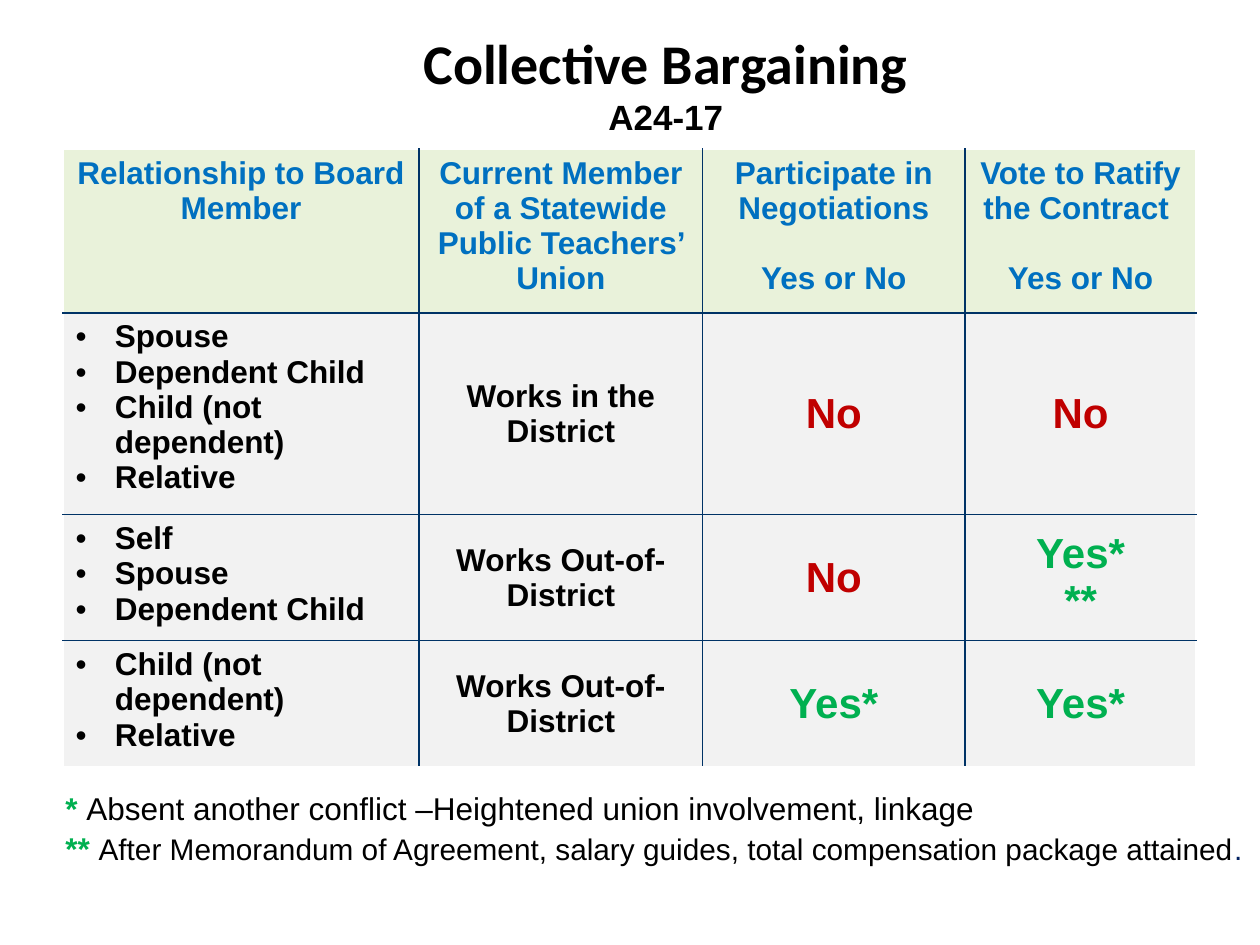
import pptx
import pptx.dml.color
import pptx.enum.text
import pptx.oxml
import pptx.oxml.ns
import pptx.util
from dataclasses import dataclass

Pt = pptx.util.Pt
ALIGN = pptx.enum.text.PP_ALIGN
ANCHOR = pptx.enum.text.MSO_ANCHOR


@dataclass(frozen=True)
class Theme:
    body_font: str = "Arial"
    title_font: str = "Calibri"
    ink: str = "000000"
    heading: str = "0070C0"
    no: str = "C00000"
    yes: str = "00B050"
    stop: str = "002060"
    rule: str = "003366"
    edge: str = "FFFFFF"
    header_fill: str = "E9F2DA"
    body_fill: str = "F2F2F2"
    title_size: int = 32
    subtitle_size: int = 20
    text_size: int = 18
    note_size: int = 17
    answer_size: int = 24
    bullet_indent: float = 22.5
    header_gap: float = 20


T = Theme()

HEADERS = [
    ["Relationship to Board Member"],
    ["Current Member of a Statewide", "Public Teachers’ Union"],
    ["Participate in Negotiations", "Yes or No"],
    ["Vote to Ratify the Contract ", "Yes or No"],
]
ROWS = [
    (["Spouse", "Dependent Child", "Child (not dependent)", "Relative"],
     ["Works in the District"], ["No"], ["No"]),
    (["Self", "Spouse", "Dependent Child"],
     ["Works Out-of-District"], ["No"], ["Yes*", "**"]),
    (["Child (not dependent)", "Relative"],
     ["Works Out-of-District"], ["Yes*"], ["Yes*"]),
]
COL_WIDTHS = [203.5, 162, 150, 132]
ROW_HEIGHTS = [93.6, 108, 72, 67.5]


def add_run(p, text, color=T.ink, size=T.text_size, bold=True, name=T.body_font):
    r = p.add_run()
    r.text = text
    for key, value in {"name": name, "size": Pt(size), "bold": bold}.items():
        setattr(r.font, key, value)
    r.font.color.rgb = pptx.dml.color.RGBColor.from_string(color)


def add_bullet(p):
    pPr = p._p.get_or_add_pPr()
    pPr.set("marL", str(Pt(T.bullet_indent)))
    pPr.set("indent", str(-Pt(T.bullet_indent)))
    for tag, key, value in (("buFont", "typeface", T.body_font), ("buChar", "char", "•")):
        pptx.oxml.ns.qn("a:" + tag)
        element = pptx.oxml.parse_xml(f'<a:{tag} {pptx.oxml.ns.nsdecls("a")} {key}="{value}"/>')
        pPr.append(element)


def set_borders(cell, colors):
    """Colours are given in the order left, right, top, bottom."""
    tcPr = cell._tc.get_or_add_tcPr()
    for side, color in zip("LRTB", colors):
        tcPr.append(pptx.oxml.parse_xml(
            f'<a:ln{side} {pptx.oxml.ns.nsdecls("a")} w="{Pt(1)}">'
            f'<a:solidFill><a:srgbClr val="{color}"/></a:solidFill></a:ln{side}>'))


def fill_cell(cell, lines, fill, borders, bullets=False, anchor=ANCHOR.MIDDLE, **font):
    set_borders(cell, borders)
    cell.fill.solid()
    cell.fill.fore_color.rgb = pptx.dml.color.RGBColor.from_string(fill)
    cell.vertical_anchor = anchor
    tf = cell.text_frame
    for i, line in enumerate(lines):
        p = tf.paragraphs[0] if i == 0 else tf.add_paragraph()
        if bullets:
            add_bullet(p)
        else:
            p.alignment = ALIGN.CENTER
        if line == "Yes or No":
            p.space_before = Pt(T.header_gap)
        add_run(p, line, **font)


def add_box(s, box, wrap=True):
    tf = s.shapes.add_textbox(*map(Pt, box)).text_frame
    tf.word_wrap = wrap
    return tf


def add_title(s, box):
    tf = add_box(s, box)
    p = tf.paragraphs[0]
    add_run(p, "Collective Bargaining", size=T.title_size, name=T.title_font)
    add_run(tf.add_paragraph(), "A24-17", size=T.subtitle_size)
    for p in tf.paragraphs:
        p.alignment = ALIGN.CENTER


def add_conflict_table(s, box):
    rows, cols = len(ROW_HEIGHTS), len(COL_WIDTHS)
    table = s.shapes.add_table(rows, cols, *map(Pt, box)).table
    for column, width in zip(table.columns, COL_WIDTHS):
        column.width = Pt(width)
    for row, height in zip(table.rows, ROW_HEIGHTS):
        row.height = Pt(height)

    for i, row in enumerate([HEADERS, *ROWS]):
        for j, lines in enumerate(row):
            outer = (j == 0, j == cols - 1, i == 0, i == rows - 1)
            borders = [T.edge if side else T.rule for side in outer]
            if i == 0:
                style = {"fill": T.header_fill, "color": T.heading, "anchor": ANCHOR.TOP}
            elif j == 0:
                style = {"fill": T.body_fill, "bullets": True, "anchor": ANCHOR.TOP}
            elif j == 1:
                style = {"fill": T.body_fill}
            else:
                color = T.no if lines[0] == "No" else T.yes
                style = {"fill": T.body_fill, "color": color, "size": T.answer_size}
            fill_cell(table.cell(i, j), lines, borders=borders, **style)


def add_footnotes(s, box):
    left, top, width, height = box
    p = add_box(s, (left, top, 538, height), wrap=False).paragraphs[0]
    add_run(p, "* ", T.yes)
    add_run(p, "Absent another conflict –Heightened union involvement, linkage", bold=False)

    p = add_box(s, (left, top + 23, width, height)).paragraphs[0]
    add_run(p, "** ", T.yes)
    add_run(p, "After Memorandum of Agreement, salary guides, total compensation package attained",
            size=T.note_size, bold=False)
    add_run(p, ".", T.stop, T.note_size, bold=False)


def main():
    prs = pptx.Presentation()
    prs.slide_width, prs.slide_height = Pt(720), Pt(540)
    s = prs.slides.add_slide(prs.slide_layouts[6])
    add_title(s, (77.5, 12.5, 606, 66))
    add_conflict_table(s, (36, 85.25, sum(COL_WIDTHS), sum(ROW_HEIGHTS)))
    add_footnotes(s, (30.25, 447.25, 696, 29))
    prs.save("out.pptx")


if __name__ == "__main__":
    main()
